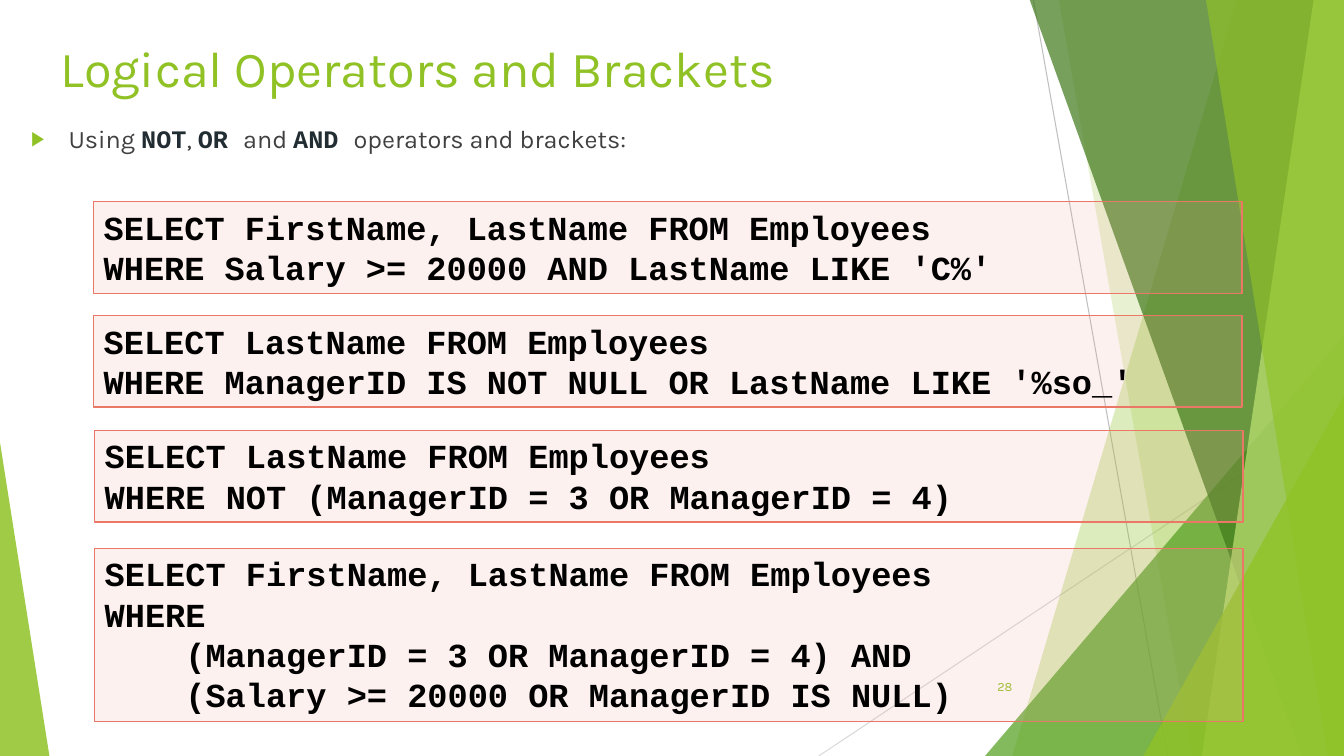
from dataclasses import dataclass

from lxml import etree
from pptx import Presentation
from pptx import util as u
from pptx.dml.color import RGBColor
from pptx.enum import shapes, text
from pptx.oxml import ns

GREEN = RGBColor(0x90, 0xC2, 0x26)
MID_GREEN = RGBColor(0x54, 0xA0, 0x21)
DARK_GREEN = RGBColor(0x3F, 0x78, 0x19)
LIGHT_GREEN = RGBColor(0xC0, 0xE4, 0x74)
GREY = RGBColor(0xBF, 0xBF, 0xBF)
PALE_GREY = RGBColor(0xD9, 0xD9, 0xD9)
BODY_GREY = RGBColor(0x40, 0x40, 0x40)
KEYWORD = RGBColor(0x21, 0x2D, 0x32)
BLACK = RGBColor(0, 0, 0)
PINK = RGBColor(0xF2, 0xA4, 0x99)
CORAL = RGBColor(0xEB, 0x77, 0x66)

WIDTH, HEIGHT = 13.33, 7.5
SANS, MONO = "Karla", "Courier New"
CODE_INDENT = 0.8


@dataclass
class Ray:
    start: tuple[float, float]
    end: tuple[float, float]
    color: RGBColor


@dataclass
class Band:
    top_x: float
    bottom_x: float
    color: RGBColor
    opacity: int


@dataclass
class Corner:
    left: float
    top: float
    width: float
    apex: float
    color: RGBColor
    opacity: int


@dataclass
class Query:
    left: float
    top: float
    height: float
    lines: list[str]
    indented: int = 0


BACKDROP = [
    Ray((10.25, 0), (11.58, HEIGHT), GREY),
    Ray((WIDTH, 4.03), (8.12, HEIGHT), PALE_GREY),
    Band(12.27, 10.04, GREEN, 30),
    Band(10.5, 11.82, GREEN, 20),
    Corner(9.77, 3.33, 3.56, 1, MID_GREEN, 72),
    Band(10.21, 12.91, DARK_GREEN, 70),
    Band(13.03, 11.92, LIGHT_GREEN, 70),
    Band(11.96, 13.17, GREEN, 65),
    Corner(11.34, 3.93, 1.99, 1, GREEN, 80),
    Corner(0, 4.39, 0.49, 0, GREEN, 85),
]

QUERIES = [
    Query(0.93, 2, 0.91, ["SELECT FirstName, LastName FROM Employees",
                          "WHERE Salary >= 20000 AND LastName LIKE 'C%'"]),
    Query(0.93, 3.13, 0.91, ["SELECT LastName FROM Employees",
                             "WHERE ManagerID IS NOT NULL OR LastName LIKE '%so_'"]),
    Query(0.94, 4.27, 0.91, ["SELECT LastName FROM Employees",
                             "WHERE NOT (ManagerID = 3 OR ManagerID = 4)"]),
    Query(0.94, 5.44, 1.72, ["SELECT FirstName, LastName FROM Employees",
                             "WHERE",
                             "(ManagerID = 3 OR ManagerID = 4) AND",
                             "(Salary >= 20000 OR ManagerID IS NULL)"], indented=2),
]

INTRO = [("Using ", False), ("NOT", True), (", ", False), ("OR ", True),
         ("and ", False), ("AND ", True), ("operators and brackets:", False)]


def fill_shape(shape, color: RGBColor, opacity: int) -> None:
    shape.shadow.inherit = False
    shape.fill.solid()
    shape.fill.fore_color.rgb = color
    solid = shape.fill._xPr.find(ns.qn("a:solidFill"))
    etree.SubElement(solid[0], ns.qn("a:alpha"), val=str(opacity * 1000))


def format_run(run, font: str, size: float, color: RGBColor, bold: bool = False) -> None:
    run.font.name = font
    run.font.size = u.Pt(size)
    run.font.color.rgb = color
    run.font.bold = bold


def place(shape, left: float, top: float, width: float, height: float) -> None:
    shape.left, shape.top = u.Inches(left), u.Inches(top)
    shape.width, shape.height = u.Inches(width), u.Inches(height)


def draw_ray(page, ray: Ray) -> None:
    points = [u.Inches(value) for value in ray.start + ray.end]
    line = page.shapes.add_connector(shapes.MSO_CONNECTOR.STRAIGHT, *points)
    line.line.color.rgb = ray.color
    line.line.width = u.Pt(0.75)
    etree.SubElement(line._element.spPr, ns.qn("a:effectLst"))


def draw_band(page, band: Band) -> None:
    top = -0.01
    corners = [(WIDTH, top), (WIDTH, HEIGHT), (band.bottom_x, HEIGHT)]
    builder = page.shapes.build_freeform(u.Inches(band.top_x), u.Inches(top))
    builder.add_line_segments([(u.Inches(x), u.Inches(y)) for x, y in corners], close=True)
    shape = builder.convert_to_shape()
    fill_shape(shape, band.color, band.opacity)
    shape.line.fill.background()


def draw_corner(page, corner: Corner) -> None:
    shape = page.shapes.add_shape(
        shapes.MSO_SHAPE.ISOSCELES_TRIANGLE, u.Inches(corner.left), u.Inches(corner.top),
        u.Inches(corner.width), u.Inches(HEIGHT - corner.top))
    shape.adjustments[0] = corner.apex
    fill_shape(shape, corner.color, corner.opacity)
    shape.line.fill.background()


def draw_query(page, query: Query) -> None:
    box = page.shapes.add_shape(
        shapes.MSO_SHAPE.RECTANGLE, u.Inches(query.left), u.Inches(query.top),
        u.Inches(11.39), u.Inches(query.height))
    fill_shape(box, PINK, 15)
    box.line.color.rgb = CORAL
    box.line.width = u.Pt(1)
    frame = box.text_frame
    frame.text = "\n".join(query.lines)
    frame.word_wrap = True
    frame.auto_size = text.MSO_AUTO_SIZE.SHAPE_TO_FIT_TEXT
    frame.vertical_anchor = text.MSO_ANCHOR.TOP
    first_indented = len(query.lines) - query.indented
    for number, para in enumerate(frame.paragraphs):
        para.alignment = text.PP_ALIGN.LEFT
        if number >= first_indented:
            para._p.get_or_add_pPr().set("marL", str(u.Inches(CODE_INDENT)))
        format_run(para.runs[0], MONO, 24, BLACK, True)


def write_title(title) -> None:
    place(title, 0.5, 0.32, 9.4, 1.44)
    frame = title.text_frame
    frame.text = "Logical Operators and Brackets"
    frame.auto_size = text.MSO_AUTO_SIZE.NONE
    frame.vertical_anchor = text.MSO_ANCHOR.TOP
    para = frame.paragraphs[0]
    para.alignment = text.PP_ALIGN.LEFT
    format_run(para.runs[0], SANS, 36, GREEN)


def write_intro(body) -> None:
    place(body, 0.21, 1.17, 12.91, 6.09)
    frame = body.text_frame
    frame.auto_size = text.MSO_AUTO_SIZE.NONE
    para = frame.paragraphs[0]
    for words, is_keyword in INTRO:
        run = para.add_run()
        run.text = words
        format_run(run, MONO if is_keyword else SANS, 18,
                   KEYWORD if is_keyword else BODY_GREY, is_keyword)
    props = para._p.get_or_add_pPr()
    props.set("marL", str(u.Inches(0.37)))
    props.set("indent", str(u.Inches(-0.37)))
    before = etree.SubElement(props, ns.qn("a:spcBef"))
    etree.SubElement(before, ns.qn("a:spcPct"), val="30000")
    tint = etree.SubElement(props, ns.qn("a:buClr"))
    etree.SubElement(tint, ns.qn("a:srgbClr"), val=str(GREEN))
    etree.SubElement(props, ns.qn("a:buSzPct"), val="80000")
    etree.SubElement(props, ns.qn("a:buChar"), char="▶")


def write_page_number(page) -> None:
    box = page.shapes.add_textbox(u.Inches(9.39), u.Inches(6.61), u.Inches(0.75), u.Inches(0.4))
    frame = box.text_frame
    frame.word_wrap = True
    frame.vertical_anchor = text.MSO_ANCHOR.MIDDLE
    frame.text = "28"
    para = frame.paragraphs[0]
    para.alignment = text.PP_ALIGN.RIGHT
    format_run(para.runs[0], SANS, 9, GREEN)


def main() -> None:
    deck = Presentation()
    deck.slide_width, deck.slide_height = u.Inches(WIDTH), u.Inches(HEIGHT)
    page = deck.slides.add_slide(deck.slide_layouts[1])
    title, body = page.placeholders
    painters = {Ray: draw_ray, Band: draw_band, Corner: draw_corner}
    for item in BACKDROP:
        painters[type(item)](page, item)
    for holder in (title, body):
        page.shapes._spTree.append(holder._element)
    write_title(title)
    write_intro(body)
    write_page_number(page)
    for query in QUERIES:
        draw_query(page, query)
    deck.save("out.pptx")


if __name__ == "__main__":
    main()
